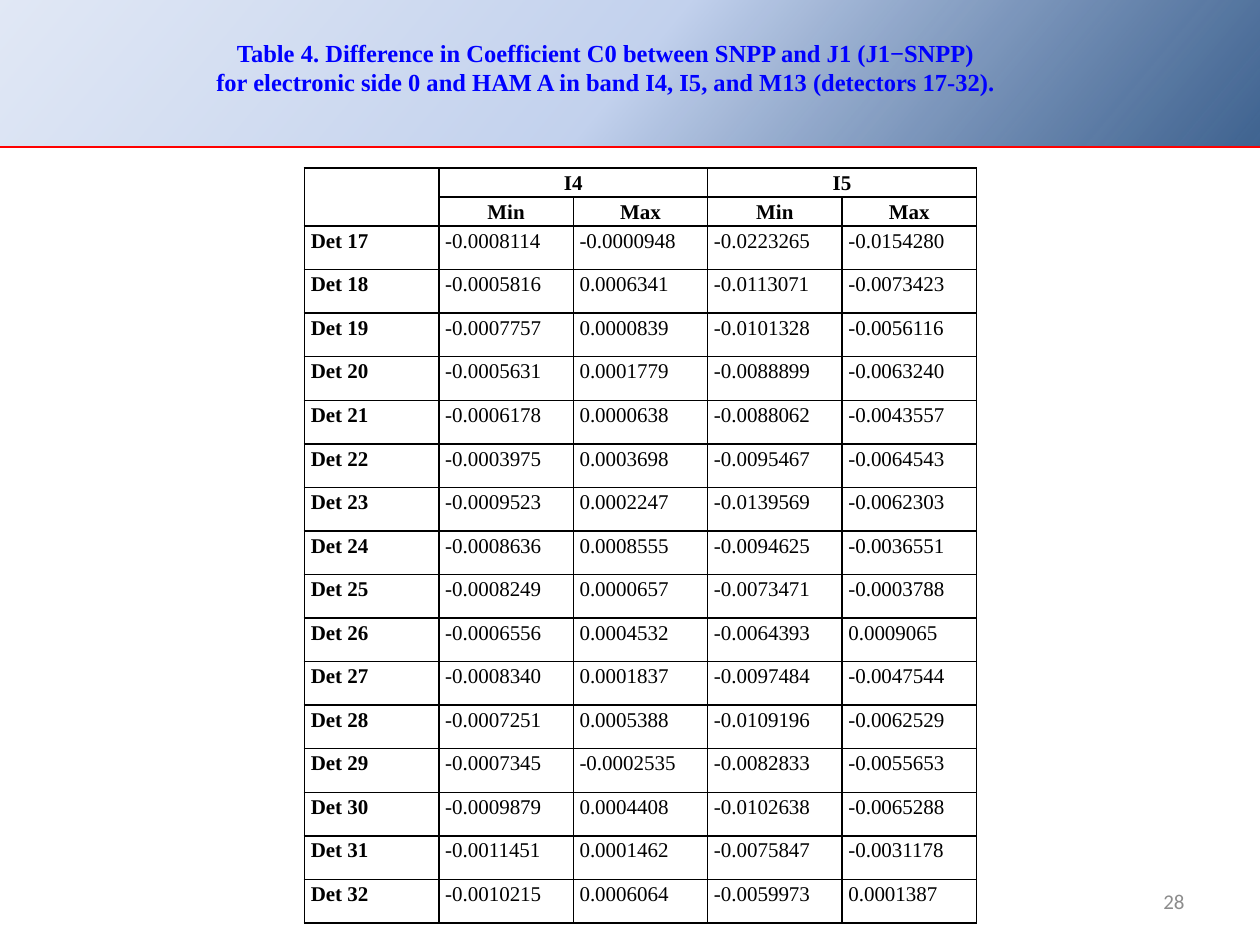
from lxml import etree
from pptx import Presentation
from pptx import util as u
from pptx.dml.color import RGBColor
from pptx.enum import shapes, text
from pptx.oxml.ns import qn

COLUMNS, ROWS = 120, 90
BANDS = ["I4", "I5"]
FIRST_DETECTOR = 17
C0_DIFFERENCES = """
-0.0008114 -0.0000948 -0.0223265 -0.0154280
-0.0005816 0.0006341 -0.0113071 -0.0073423
-0.0007757 0.0000839 -0.0101328 -0.0056116
-0.0005631 0.0001779 -0.0088899 -0.0063240
-0.0006178 0.0000638 -0.0088062 -0.0043557
-0.0003975 0.0003698 -0.0095467 -0.0064543
-0.0009523 0.0002247 -0.0139569 -0.0062303
-0.0008636 0.0008555 -0.0094625 -0.0036551
-0.0008249 0.0000657 -0.0073471 -0.0003788
-0.0006556 0.0004532 -0.0064393 0.0009065
-0.0008340 0.0001837 -0.0097484 -0.0047544
-0.0007251 0.0005388 -0.0109196 -0.0062529
-0.0007345 -0.0002535 -0.0082833 -0.0055653
-0.0009879 0.0004408 -0.0102638 -0.0065288
-0.0011451 0.0001462 -0.0075847 -0.0031178
-0.0010215 0.0006064 -0.0059973 0.0001387
"""


def rgb(code):
    return RGBColor.from_string(code)


def assign(target, values):
    for name, value in values.items():
        setattr(target, name, value)


def child(parent, tag, **attributes):
    return etree.SubElement(parent, qn(tag), attributes)


class SlideBuilder:
    """Draws on one slide, with lengths in columns and rows of its grid."""

    title_font = {"name": "Times New Roman", "size": u.Pt(14), "bold": True}
    cell_font = {"name": "Times New Roman", "size": u.Pt(12)}
    number_font = {"name": "Calibri", "size": u.Pt(12)}
    cell_format = {"margin_left": u.Inches(0.05), "margin_right": u.Inches(0.05),
                   "margin_top": 0, "margin_bottom": 0}

    def __init__(self, deck):
        self.column = deck.slide_width / COLUMNS
        self.row = deck.slide_height / ROWS
        self.slide = deck.slides.add_slide(deck.slide_layouts[6])

    def area(self, left, top, width, height):
        return (round(left * self.column), round(top * self.row),
                round(width * self.column), round(height * self.row))

    def add_wording(self, paragraph, wording, font, color, align):
        paragraph.alignment = align
        run = paragraph.add_run()
        run.text = wording
        assign(run.font, font)
        run.font.color.rgb = rgb(color)

    def gradient_band(self, area, stops, angle):
        """Stops are (position, colour, opacity), all but colour in percent."""
        band = self.slide.shapes.add_shape(shapes.MSO_SHAPE.RECTANGLE, *self.area(*area))
        band.shadow.inherit = False
        band.line.fill.background()
        band.fill.gradient()
        band.fill.gradient_angle = angle
        stop_list = next(band._element.iter(qn("a:gsLst")))
        for stop in list(stop_list):
            stop_list.remove(stop)
        for position, color, opacity in stops:
            stop = child(stop_list, "a:gs", pos=str(position * 1000))
            shade = child(stop, "a:srgbClr", val=color)
            if opacity < 100:
                child(shade, "a:alpha", val=str(opacity * 1000))

    def rule(self, left, top, width, color, weight):
        x, y, length, _ = self.area(left, top, width, 0)
        rule = self.slide.shapes.add_connector(
            shapes.MSO_CONNECTOR.STRAIGHT, x, y, x + length, y)
        rule.line.color.rgb = rgb(color)
        rule.line.width = u.Pt(weight)
        child(rule._element.spPr, "a:effectLst")

    def text_box(self, area, lines, font, color, align, frame_format):
        frame = self.slide.shapes.add_textbox(*self.area(*area)).text_frame
        assign(frame, {"word_wrap": True, **frame_format})
        for index, line in enumerate(lines):
            paragraph = frame.add_paragraph() if index else frame.paragraphs[0]
            self.add_wording(paragraph, line, font, color, align)

    def cell(self, cell, wording, bold, align):
        assign(cell, self.cell_format)
        properties = cell._tc.get_or_add_tcPr()
        for side in "LRTB":
            border = child(properties, f"a:ln{side}", w=str(int(u.Pt(1))))
            child(child(border, "a:solidFill"), "a:srgbClr", val="000000")
        cell.fill.background()
        paragraph = cell.text_frame.paragraphs[0]
        paragraph.line_spacing = 1.15
        if wording:
            cell_font = {**self.cell_font, "bold": bold}
            self.add_wording(paragraph, wording, cell_font, "000000", align)
        else:
            child(paragraph._p, "a:endParaRPr", sz="1200")

    def table(self, area, grid, header_rows, header_height):
        box = self.area(*area)
        table = self.slide.shapes.add_table(len(grid), len(grid[0]), *box).table
        assign(table, {"first_row": False, "horz_banding": False})
        for column in table.columns:
            column.width = box[2] // len(grid[0])
        body_height = (area[3] - header_rows * header_height) / (len(grid) - header_rows)
        for r, values in enumerate(grid):
            is_header = r < header_rows
            table.rows[r].height = round(self.row * (header_height if is_header else body_height))
            align = text.PP_ALIGN.CENTER if is_header else text.PP_ALIGN.LEFT
            for c, value in enumerate(values):
                self.cell(table.cell(r, c), value, is_header or c == 0, align)
        return table


def main():
    deck = Presentation()
    assign(deck, {"slide_width": u.Inches(10), "slide_height": u.Inches(7.5)})
    builder = SlideBuilder(deck)

    header_height = 14
    builder.gradient_band((0, 0, COLUMNS, header_height),
                          [(0, "1F497D", 85), (50, "C2D1ED", 100), (100, "E1E8F5", 100)],
                          angle=140)
    builder.rule(0, header_height, COLUMNS, "FF0000", 1.5)
    builder.text_box((86, 83.4, 28, 4.8), ["28"], builder.number_font, "8C8C8C",
                     text.PP_ALIGN.RIGHT, {"vertical_anchor": text.MSO_ANCHOR.MIDDLE})

    grid = [[""] + [label for band in BANDS for label in (band, "")],
            [""] + ["Min", "Max"] * len(BANDS)]
    for detector, line in enumerate(C0_DIFFERENCES.strip().splitlines(), FIRST_DETECTOR):
        grid.append([f"Det {detector}"] + line.split())
    table = builder.table((29, 16, 64, 71.9), grid, header_rows=2, header_height=2.76)
    table.cell(0, 0).merge(table.cell(1, 0))
    for first in range(1, len(grid[0]), 2):
        table.cell(0, first).merge(table.cell(0, first + 1))

    builder.text_box((12, 3, 92, 6.9),
                     ["Table 4. Difference in Coefficient C0 between SNPP and J1 (J1−SNPP) ",
                      "for electronic side 0 and HAM A in band I4, I5, and M13 (detectors 17-32). "],
                     builder.title_font, "0000FF", text.PP_ALIGN.CENTER,
                     {"auto_size": text.MSO_AUTO_SIZE.SHAPE_TO_FIT_TEXT})
    deck.save("out.pptx")


if __name__ == "__main__":
    main()
